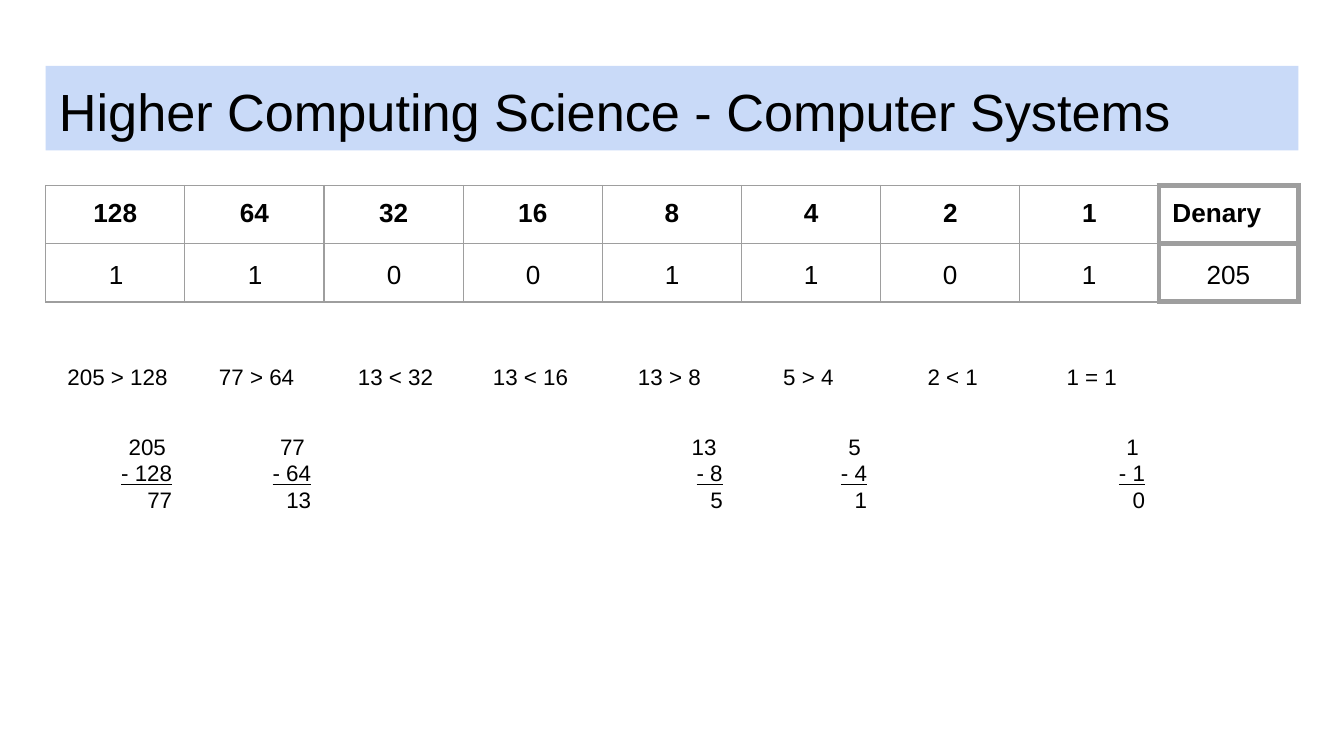
from typing import NamedTuple
from lxml import etree
from pptx import Presentation
from pptx import util as u
from pptx.dml.color import RGBColor
from pptx.enum import shapes, text
from pptx.oxml import ns

HUES = {"ink": "000000", "band": "C9DAF8", "rule": "9E9E9E"}
FONT = "Arial"
LEFT, WIDE = 0.34, 9.32
STEP = 1.034
ALIGN = text.PP_ALIGN
INSET = u.Inches(0.1)


class Place(NamedTuple):
    head: str
    bit: str
    check: str
    work: tuple = ()
    nudge: float = 0.03
    shift: float = 0


PLACES = [
    Place("128", "1", "205 > 128", ("205 ", "- 128", "77")),
    Place("64", "1", "77 > 64", ("77 ", "- 64", "13")),
    Place("32", "0", "13 < 32"),
    Place("16", "0", "13 < 16", nudge=0),
    Place("8", "1", "13 > 8", ("13 ", "- 8", "5"), nudge=0, shift=-0.04),
    Place("4", "1", "5 > 4", ("5 ", "- 4", "1"), nudge=0),
    Place("2", "0", "2 < 1", nudge=0.04),
    Place("1", "1", "1 = 1", ("1 ", "- 1", "0"), nudge=0.04),
]


def hue(name: str) -> RGBColor:
    return RGBColor.from_string(HUES[name])


def write(frame, *lines: str, size: float = 12, bold: bool = False,
          align=ALIGN.CENTER, under: int = -1) -> None:
    frame.word_wrap = True
    frame.vertical_anchor = text.MSO_ANCHOR.TOP
    frame.margin_left = frame.margin_right = INSET
    frame.margin_top = frame.margin_bottom = INSET
    for i, line in enumerate(lines):
        para = frame.paragraphs[0] if i == 0 else frame.add_paragraph()
        para.alignment = align
        run = para.add_run()
        run.text = line
        run.font.name = FONT
        run.font.size = u.Pt(size)
        run.font.bold = bold
        run.font.color.rgb = hue("ink")
        if i == under:
            run.font.underline = True


def label(slide, x: float, y: float, w: float, h: float, *lines: str, **form) -> None:
    box = slide.shapes.add_textbox(*map(u.Inches, (x, y, w, h)))
    write(box.text_frame, *lines, **form)


def edge(cell, side: str, width: float) -> None:
    line = etree.SubElement(cell._tc.get_or_add_tcPr(), ns.qn(f"a:ln{side}"),
                            w=str(u.Pt(width)))
    fill = etree.SubElement(line, ns.qn("a:solidFill"))
    etree.SubElement(fill, ns.qn("a:srgbClr"), val=HUES["rule"])


def title(slide) -> None:
    band = slide.shapes.add_shape(shapes.MSO_SHAPE.RECTANGLE,
                                  *map(u.Inches, (LEFT, 0.49, WIDE, 0.63)))
    band.shadow.inherit = False
    band.fill.solid()
    band.fill.fore_color.rgb = hue("band")
    band.line.fill.background()
    write(band.text_frame, "Higher Computing Science - Computer Systems",
          size=28, align=ALIGN.LEFT)


def table(slide) -> None:
    heads = [p.head for p in PLACES] + ["Denary"]
    last = len(heads) - 1
    grid = slide.shapes.add_table(2, len(heads),
                                  *map(u.Inches, (LEFT, 1.38, WIDE, 0.85))).table
    grid.first_row = grid.horz_banding = False
    for row, high in zip(grid.rows, (0.43, 0.42)):
        row.height = u.Inches(high)
    for c, head in enumerate(heads):
        grid.columns[c].width = u.Inches(WIDE / len(heads))
        for r in range(2):
            cell = grid.cell(r, c)
            for side in "LRTB":
                thick = c == last or (c == last - 1 and side == "R")
                edge(cell, side, 3 if thick else 0.75)
            cell.fill.background()
            cell.margin_left = cell.margin_right = INSET
            cell.margin_top = cell.margin_bottom = INSET
            if r == 0:
                write(cell.text_frame, head, size=14, bold=True,
                      align=ALIGN.LEFT if c == last else ALIGN.CENTER)
            else:
                para = cell.text_frame.paragraphs[0]
                etree.SubElement(para._p, ns.qn("a:endParaRPr"), sz="1400")


def main() -> None:
    deck = Presentation()
    deck.slide_width = u.Inches(10)
    deck.slide_height = deck.slide_width * 9 // 16
    slide = deck.slides.add_slide(deck.slide_layouts[6])
    title(slide)
    table(slide)
    label(slide, 8.62, 1.82, 1.04, 0.44, "205", size=14)
    for i, place in enumerate(PLACES):
        x = 0.35 + i * STEP
        label(slide, x + place.nudge, 2.6, 0.99, 0.3, place.check)
        label(slide, x, 1.82, 1.03, 0.43, place.bit, size=14)
        if place.work:
            label(slide, x + place.shift, 3.12, 1.03, 0.3, *place.work,
                  align=ALIGN.RIGHT, under=1)
    deck.save("out.pptx")


if __name__ == "__main__":
    main()
